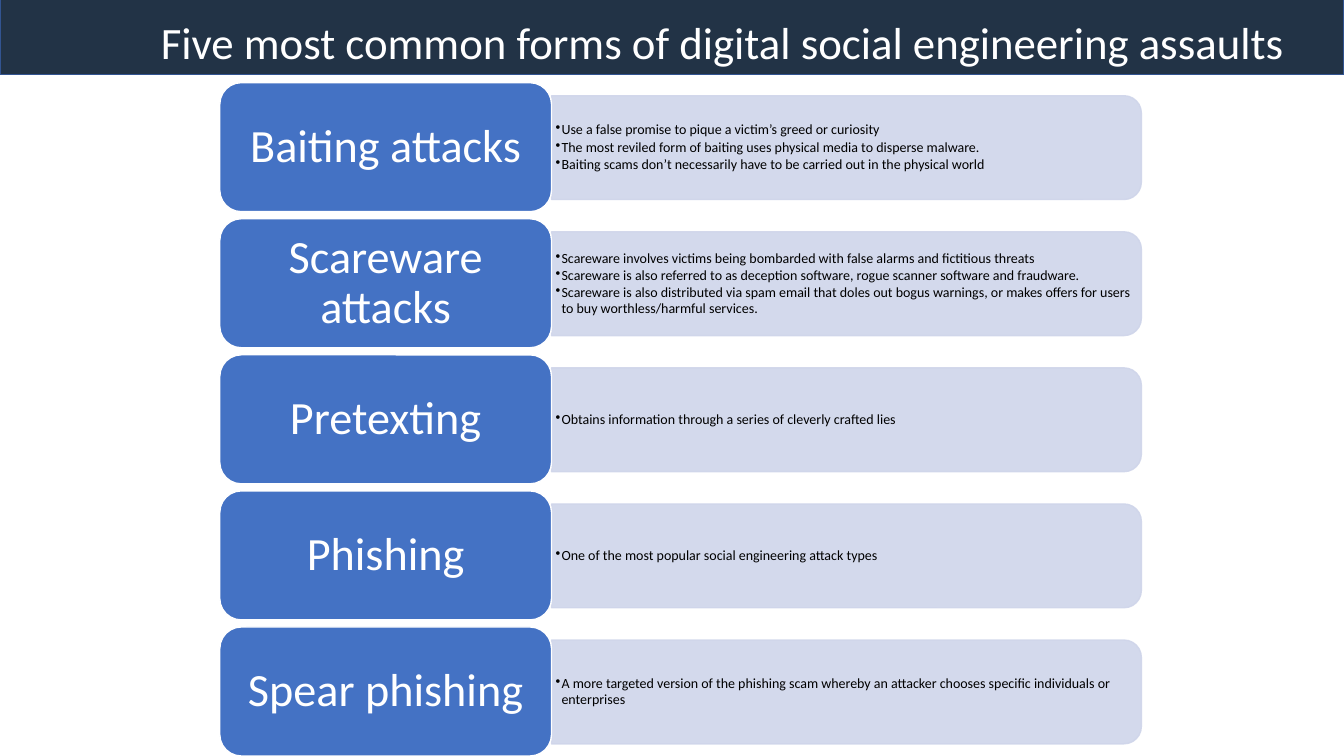
from lxml.etree import SubElement
from pptx import Presentation
from pptx.dml.color import RGBColor
from pptx.enum.shapes import MSO_SHAPE
from pptx.enum.text import MSO_ANCHOR, PP_ALIGN
from pptx.oxml.ns import qn
from pptx.util import Inches, Pt

COLORS = {
    "bar": "223346", "bar_line": "325491", "label": "4472C4",
    "panel": "CFD5EA", "white": "FFFFFF", "black": "000000",
}
TITLE = "Five most common forms of digital social engineering assaults"
ATTACKS = [
    ("Baiting attacks", [
        "Use a false promise to pique a victim’s greed or curiosity",
        "The most reviled form of baiting uses physical media to disperse malware.",
        "Baiting scams don’t necessarily have to be carried out in the physical world",
    ]),
    ("Scareware attacks", [
        "Scareware involves victims being bombarded with false alarms and fictitious threats",
        "Scareware is also referred to as deception software, rogue scanner software and fraudware.",
        "Scareware is also distributed via spam email that doles out bogus warnings, "
        "or makes offers for users to buy worthless/harmful services.",
    ]),
    ("Pretexting", ["Obtains information through a series of cleverly crafted lies"]),
    ("Phishing", ["One of the most popular social engineering attack types"]),
    ("Spear phishing", [
        "A more targeted version of the phishing scam whereby an attacker chooses "
        "specific individuals or enterprises",
    ]),
]
TOP, PITCH = 0.82, 1.35


class Deck:
    """Holds the style and the current slide."""
    font = "Calibri"

    def __init__(self, prs):
        self.s = prs.slides.add_slide(prs.slide_layouts[6])

    def color(self, name):
        return RGBColor.from_string(COLORS[name])

    def shape(self, kind, x, y, w, h, fill, line, rotation=0, opacity=100):
        sp = self.s.shapes.add_shape(kind, Inches(x), Inches(y), Inches(w), Inches(h))
        sp.shadow.inherit = False
        sp.rotation = rotation
        sp.fill.solid()
        sp.fill.fore_color.rgb = self.color(fill)
        sp.line.color.rgb = self.color(line)
        sp.line.width = Pt(1)
        if opacity < 100:
            for clr in sp._element.spPr.iter(qn("a:srgbClr")):
                SubElement(clr, qn("a:alpha"), val=str(opacity * 1000))
        return sp

    def box(self, x, y, w, h):
        return self.s.shapes.add_textbox(Inches(x), Inches(y), Inches(w), Inches(h))

    def frame(self, sp, side=0.1, edge=0.05, anchor=MSO_ANCHOR.TOP):
        tf = sp.text_frame
        tf.word_wrap = True
        tf.vertical_anchor = anchor
        tf.margin_left = tf.margin_right = Inches(side)
        tf.margin_top = tf.margin_bottom = Inches(edge)
        return tf

    def text(self, p, text, size, color, align=PP_ALIGN.CENTER, spacing=None):
        p.alignment = align
        p.line_spacing = spacing
        r = p.add_run()
        r.text = text
        r.font.name = self.font
        r.font.size = Pt(size)
        r.font.color.rgb = self.color(color)

    def bullets(self, tf, items):
        for i, item in enumerate(items):
            p = tf.add_paragraph() if i else tf.paragraphs[0]
            p.level = 1
            pPr = p._p.get_or_add_pPr()
            pPr.set("marL", str(Inches(0.06)))
            pPr.set("indent", str(Inches(-0.06)))
            SubElement(pPr, qn("a:buChar"), char="•")
            p.space_after = Pt(1.5)
            self.text(p, item, 10, "black", PP_ALIGN.LEFT, 0.9)

    def attack(self, y, name, facts):
        """Draw one row: a panel of facts behind its label."""
        self.shape(MSO_SHAPE.ROUND_2_SAME_RECTANGLE, 7.88, y - 2.28, 1.03, 5.85,
                   "panel", "panel", rotation=90, opacity=90)
        self.bullets(self.frame(self.box(5.47, y + 0.18, 5.8, 0.93), 0.04, 0.02,
                                MSO_ANCHOR.MIDDLE), facts)
        label = self.shape(MSO_SHAPE.ROUNDED_RECTANGLE, 2.18, y, 3.29, 1.28,
                           "label", "white")
        tf = self.frame(label, 0.14, 0.07, MSO_ANCHOR.MIDDLE)
        self.text(tf.paragraphs[0], name, 33, "white", spacing=0.9)

    def title(self, text):
        tf = self.frame(self.box(0.86, 0.1, 12.62, 0.64))
        self.text(tf.paragraphs[0], text, 32, "white")


def main():
    prs = Presentation()
    prs.slide_width, prs.slide_height = Inches(13.33), Inches(7.5)
    deck = Deck(prs)
    deck.shape(MSO_SHAPE.RECTANGLE, 0, -0.04, 13.33, 0.78, "bar", "bar_line")
    for i, (name, facts) in enumerate(ATTACKS):
        deck.attack(TOP + i * PITCH, name, facts)
    deck.title(TITLE)
    prs.save("out.pptx")


if __name__ == "__main__":
    main()
